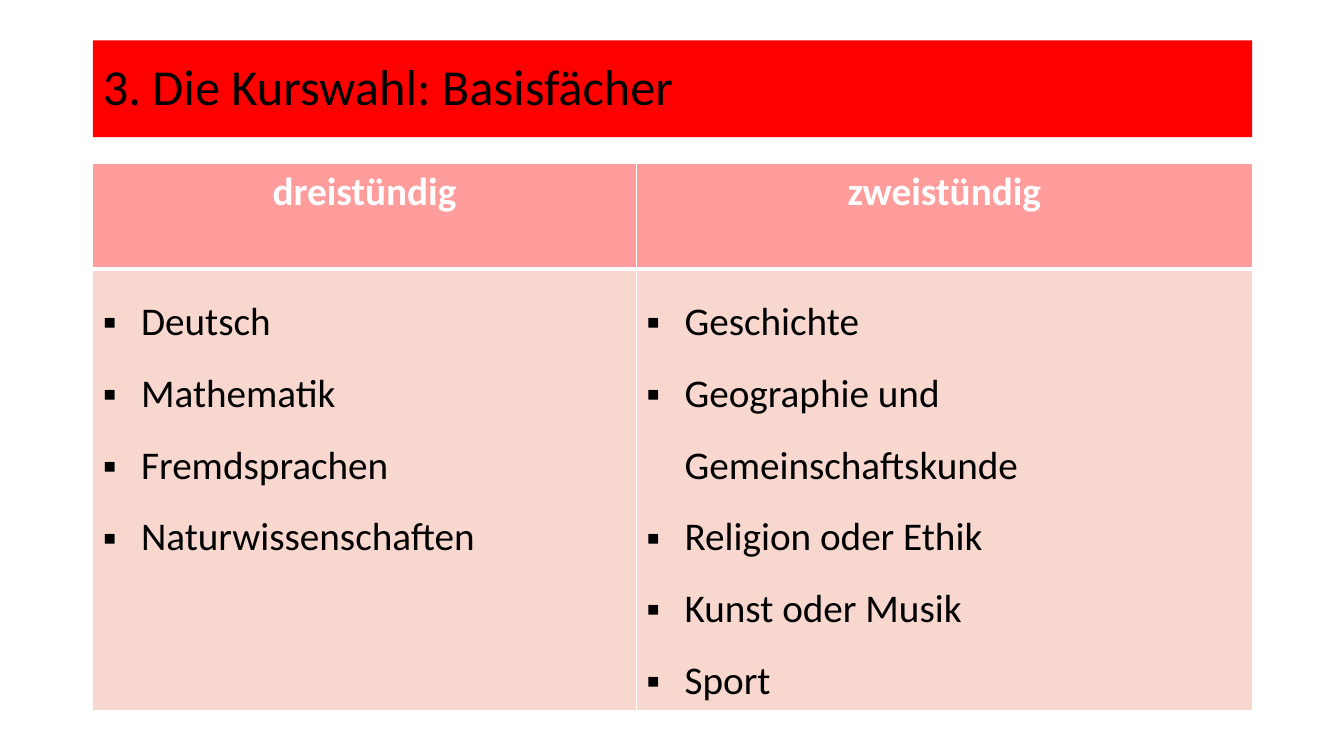
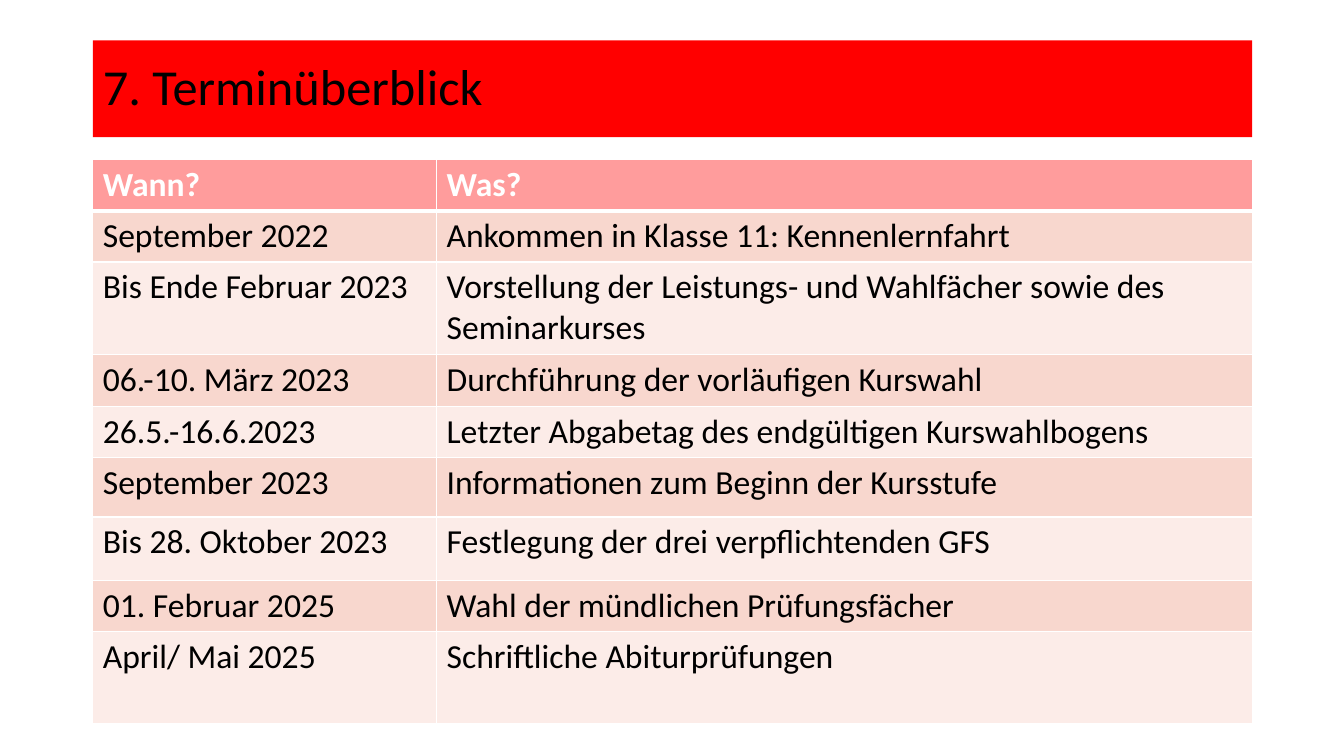
"""Build two slides on course choice: basic subjects and a schedule."""
from dataclasses import dataclass

from lxml import etree
from pptx import Presentation
from pptx.dml.color import RGBColor
from pptx.enum.text import MSO_ANCHOR, MSO_AUTO_SIZE, PP_ALIGN
from pptx.oxml.ns import qn
from pptx.util import Pt

LEFT, CENTER = PP_ALIGN.LEFT, PP_ALIGN.CENTER
MIDDLE, NO_FIT = MSO_ANCHOR.MIDDLE, MSO_AUTO_SIZE.NONE
PX = 9144
TITLE_ONLY = 5


@dataclass(frozen=True)
class Theme:
    font: str = "Calibri"
    band: str = "FF0000"
    header: str = "FF9C9C"
    rows: tuple = ("F8D7CE", "FCECE8")
    text: str = "000000"
    light: str = "FFFFFF"
    title_size: int = 36
    rule: int = 1
    header_rule: int = 3


THEME = Theme()
SLIDE = (1333, 750)
TITLE_BOX = (92, 40, 1150, 96)
BULLET, INDENT = "▪", 38

SLIDES = [
    {
        "title": "3. Die Kurswahl: Basisfächer",
        "top": 162,
        "cols": [539, 611],
        "heights": [105, 435],
        "size": 28,
        "header_align": CENTER,
        "header_gap": 6,
        "bullets": True,
        "header": ["dreistündig", "zweistündig"],
        "body": [
            (
                ["Deutsch", "Mathematik", "Fremdsprachen", "Naturwissenschaften"],
                ["Geschichte", "Geographie und Gemeinschaftskunde",
                 "Religion oder Ethik", "Kunst oder Musik", "Sport"],
            ),
        ],
    },
    {
        "title": "7. Terminüberblick",
        "top": 158,
        "cols": [341, 809],
        "heights": [51, 51, 92, 51, 51, 59, 63, 51, 91],
        "size": 24,
        "header_align": LEFT,
        "header_gap": 0,
        "bullets": False,
        "header": ["Wann?", "Was?"],
        "body": [
            (["September 2022"], ["Ankommen in Klasse 11: Kennenlernfahrt"]),
            (["Bis Ende Februar 2023"],
             ["Vorstellung der Leistungs- und Wahlfächer sowie des Seminarkurses"]),
            (["06.-10. März 2023"], ["Durchführung der vorläufigen Kurswahl"]),
            (["26.5.-16.6.2023"], ["Letzter Abgabetag des endgültigen Kurswahlbogens"]),
            (["September 2023"], ["Informationen zum Beginn der Kursstufe"]),
            (["Bis 28. Oktober 2023"], ["Festlegung der drei verpflichtenden GFS"]),
            (["01. Februar 2025"], ["Wahl der mündlichen Prüfungsfächer"]),
            (["April/ Mai 2025"], ["Schriftliche Abiturprüfungen"]),
        ],
    },
]


def rgb(color):
    return RGBColor.from_string(color)


def fill(target, color):
    target.fill.solid()
    target.fill.fore_color.rgb = rgb(color)


def add_run(p, text, size, color, bold=False):
    r = p.add_run()
    r.text = text
    r.font.name = THEME.font
    r.font.size = Pt(size)
    r.font.bold = bold
    r.font.color.rgb = rgb(color)


def add_bullet(p):
    p.line_spacing = 1.5
    pPr = p._p.get_or_add_pPr()
    pPr.set("marL", str(INDENT * PX))
    pPr.set("indent", str(-INDENT * PX))
    etree.SubElement(pPr, qn("a:buFont"), typeface="Arial")
    etree.SubElement(pPr, qn("a:buChar"), char=BULLET)


def set_borders(cell, top, bottom):
    tcPr = cell._tc.get_or_add_tcPr()
    widths = {"lnL": THEME.rule, "lnR": THEME.rule, "lnT": top, "lnB": bottom}
    for i, (side, width) in enumerate(widths.items()):
        ln = etree.Element(qn(f"a:{side}"), w=str(Pt(width)))
        solid = etree.SubElement(ln, qn("a:solidFill"))
        etree.SubElement(solid, qn("a:srgbClr"), val=THEME.light)
        tcPr.insert(i, ln)


def add_title(s, text):
    sp = s.shapes.title
    sp.left, sp.top, sp.width, sp.height = (v * PX for v in TITLE_BOX)
    fill(sp, THEME.band)
    tf = sp.text_frame
    tf.word_wrap = True
    tf.auto_size = NO_FIT
    tf.vertical_anchor = MIDDLE
    p = tf.paragraphs[0]
    p.alignment = LEFT
    p.line_spacing = 0.9
    add_run(p, text, THEME.title_size, THEME.text)


def fill_header(cell, text, data):
    fill(cell, THEME.header)
    p = cell.text_frame.paragraphs[0]
    p.alignment = data["header_align"]
    p.space_before = p.space_after = Pt(data["header_gap"])
    add_run(p, text, data["size"], THEME.light, True)
    set_borders(cell, THEME.rule, THEME.header_rule)


def fill_body(cell, lines, row, data):
    fill(cell, THEME.rows[row % len(THEME.rows)])
    tf = cell.text_frame
    for i, line in enumerate(lines):
        p = tf.add_paragraph() if i else tf.paragraphs[0]
        if data["bullets"]:
            add_bullet(p)
        add_run(p, line, data["size"], THEME.text)
    set_borders(cell, THEME.rule if row else THEME.header_rule, THEME.rule)


def add_table(s, data):
    cols, heights = data["cols"], data["heights"]
    box = (TITLE_BOX[0], data["top"], sum(cols), sum(heights))
    table = s.shapes.add_table(len(heights), len(cols), *(v * PX for v in box)).table
    table.horz_banding = False
    for column, width in zip(table.columns, cols):
        column.width = width * PX
    for row, height in zip(table.rows, heights):
        row.height = height * PX
    for c, text in enumerate(data["header"]):
        fill_header(table.cell(0, c), text, data)
    for r, entries in enumerate(data["body"]):
        for c, lines in enumerate(entries):
            fill_body(table.cell(r + 1, c), lines, r, data)


def main():
    prs = Presentation()
    prs.slide_width, prs.slide_height = (v * PX for v in SLIDE)
    for data in SLIDES:
        s = prs.slides.add_slide(prs.slide_layouts[TITLE_ONLY])
        add_title(s, data["title"])
        add_table(s, data)
    prs.save("out.pptx")


if __name__ == "__main__":
    main()
